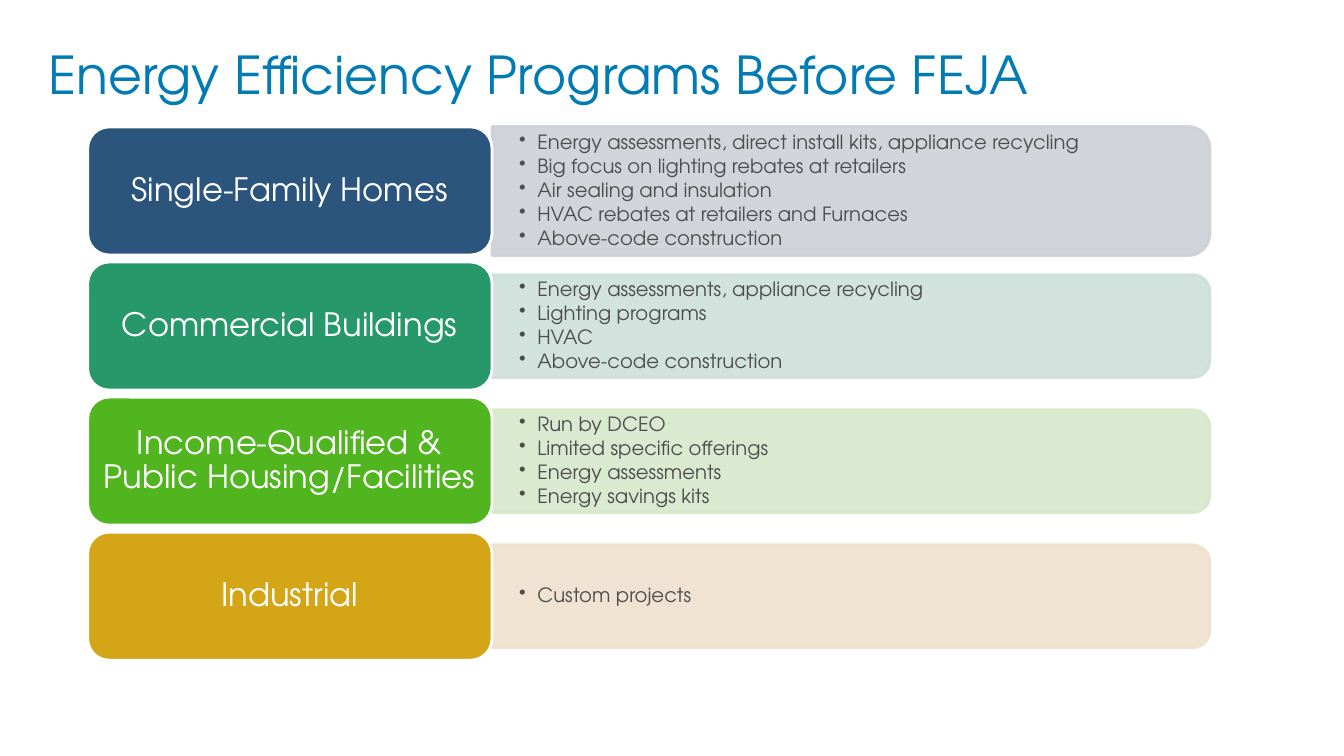
"""Build the slide on energy efficiency programs before FEJA."""
from dataclasses import dataclass

from lxml import etree
from pptx import Presentation
from pptx.dml.color import RGBColor
from pptx.enum.shapes import MSO_SHAPE
from pptx.enum.text import MSO_ANCHOR, PP_ALIGN
from pptx.oxml.ns import qn
from pptx.util import Inches, Pt

ROUND = MSO_SHAPE.ROUNDED_RECTANGLE
HALF = MSO_SHAPE.ROUND_2_SAME_RECTANGLE
MIDDLE = MSO_ANCHOR.MIDDLE
LEFT, CENTER = PP_ALIGN.LEFT, PP_ALIGN.CENTER

ROWS = [
    ("Single-Family Homes", "2C557E", "CDD1D8", 1.28, [
        "Energy assessments, direct install kits, appliance recycling",
        "Big focus on lighting rebates at retailers",
        "Air sealing and insulation",
        "HVAC rebates at retailers and Furnaces",
        "Above-code construction"]),
    ("Commercial Buildings", "279869", "CCE0D9", 1.02, [
        "Energy assessments, appliance recycling",
        "Lighting programs",
        "HVAC",
        "Above-code construction"]),
    ("Income-Qualified & Public Housing/Facilities", "51B520", "D6E8CC", 1.02, [
        "Run by DCEO",
        "Limited specific offerings",
        "Energy assessments",
        "Energy savings kits"]),
    ("Industrial", "D4A516", "EFE1CC", 1.02, ["Custom projects"]),
]


@dataclass(frozen=True)
class Theme:
    """Colours, font and type sizes of the slide."""
    font: str = "TeX Gyre Adventor"
    title: str = "007BB3"
    body: str = "4D4D4D"
    white: str = "FFFFFF"
    big: float = 37.3
    label: float = 23
    small: float = 14
    edge: float = 2
    alpha: int = 90


def write(frame, lines, font, size, color, align=LEFT, inset=(0.1, 0.05),
          bullet=False, leading=1.0, after=0):
    """Fill a text frame with one paragraph per line."""
    frame.word_wrap = True
    frame.vertical_anchor = MIDDLE
    frame.margin_left = frame.margin_right = Inches(inset[0])
    frame.margin_top = frame.margin_bottom = Inches(inset[1])
    for i, line in enumerate(lines):
        para = frame.add_paragraph() if i else frame.paragraphs[0]
        para.alignment = align
        para.line_spacing = leading
        para.space_after = Pt(after)
        if bullet:
            props = para._p.get_or_add_pPr()
            hang = Inches(0.18)
            props.set("marL", str(hang))
            props.set("indent", str(-hang))
            etree.SubElement(props, qn("a:buChar")).set("char", "•")
        run = para.add_run()
        run.text = line
        run.font.name = font
        run.font.size = Pt(size)
        run.font.color.rgb = RGBColor.from_string(color)


def fade(fill, percent):
    """Make a solid fill partly transparent."""
    for color in fill._xPr.iter(qn("a:srgbClr")):
        if color.find(qn("a:alpha")) is None:
            etree.SubElement(color, qn("a:alpha")).set("val", str(percent * 1000))


class Painter:
    """Draws the elements of one slide in a given theme."""

    def __init__(self, slide, theme):
        """Keep the slide and its theme."""
        self.shapes = slide.shapes
        self.theme = theme

    def text(self, box, lines, size, color, **style):
        """Add a text box."""
        shape = self.shapes.add_textbox(*map(Inches, box))
        write(shape.text_frame, lines, self.theme.font, size, color, **style)

    def shape(self, kind, box, fill, line):
        """Add a filled and outlined shape."""
        shape = self.shapes.add_shape(kind, *map(Inches, box))
        shape.shadow.inherit = False
        shape.fill.solid()
        shape.fill.fore_color.rgb = RGBColor.from_string(fill)
        shape.line.color.rgb = RGBColor.from_string(line)
        shape.line.width = Pt(self.theme.edge)
        return shape

    def bar(self, left, mid, width, height, color, lines):
        """Add a bar rounded on its right, with a bullet list on it."""
        box = (left + (width - height) / 2, mid - width / 2, height, width)
        shape = self.shape(HALF, box, color, color)
        shape.rotation = 90
        fade(shape.fill, self.theme.alpha)
        fade(shape.line.fill, self.theme.alpha)
        self.text((left, mid - height / 2, width - 0.05, height), lines,
                  self.theme.small, self.theme.body, inset=(0.27, 0.14),
                  bullet=True, leading=0.9, after=2.1)

    def tab(self, box, color, label):
        """Add a rounded label box."""
        shape = self.shape(ROUND, box, color, self.theme.white)
        write(shape.text_frame, [label], self.theme.font, self.theme.label,
              self.theme.white, align=CENTER, leading=0.9)


def main():
    """Build and save the slide."""
    deck = Presentation()
    deck.slide_width, deck.slide_height = Inches(13.33), Inches(7.5)
    theme = Theme()
    paint = Painter(deck.slides.add_slide(deck.slide_layouts[6]), theme)
    paint.text((0.38, 0.41, 12.29, 0.64),
               ["Energy Efficiency Programs Before FEJA"], theme.big, theme.title)
    left, top, width, height, pitch = 0.87, 1.26, 4.01, 1.27, 1.34
    for i, (label, dark, pale, depth, lines) in enumerate(ROWS):
        y = top + i * pitch
        paint.bar(left + width, y + height / 2, 7.12, depth, pale, lines)
        paint.tab((left, y, width, height), dark, label)
    deck.save("out.pptx")


if __name__ == "__main__":
    main()
